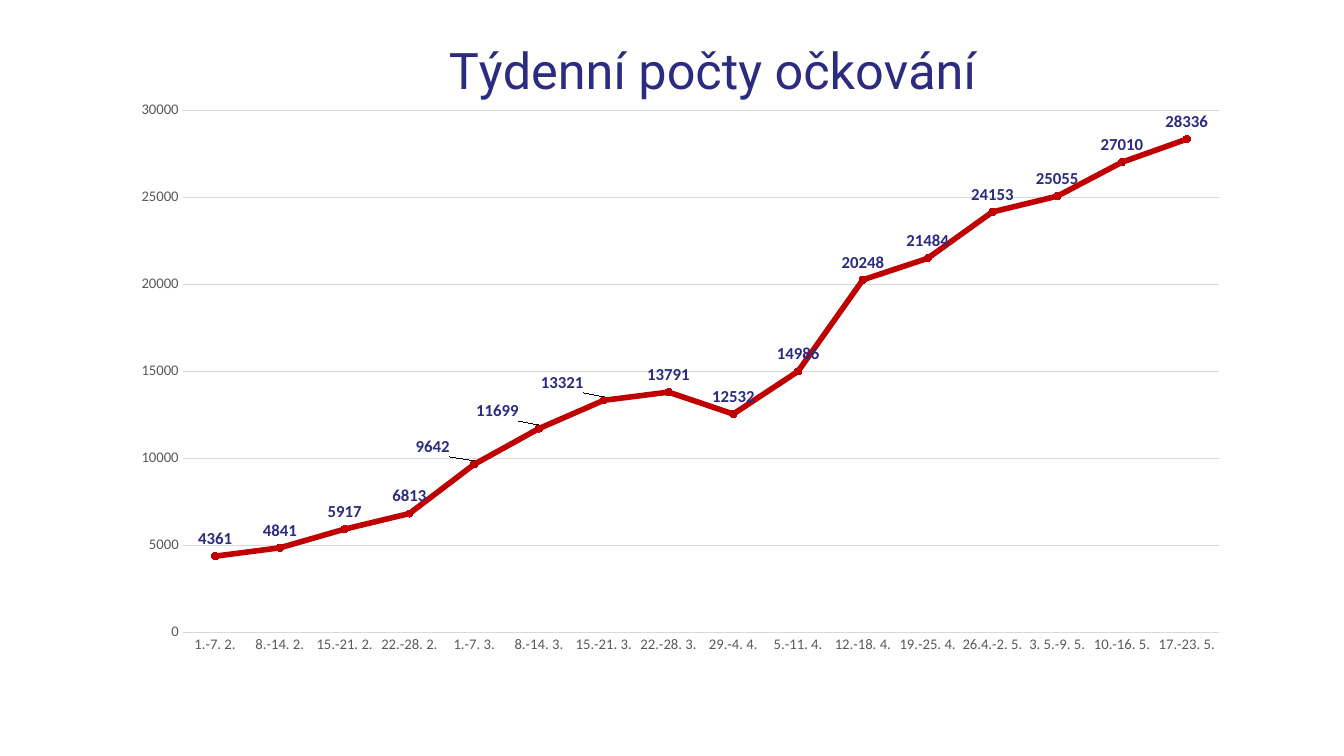
from pptx import Presentation
from pptx import util as u
from pptx.chart.data import CategoryChartData
from pptx.dml.color import RGBColor
from pptx.enum import chart as charts
from pptx.oxml import parse_xml
from pptx.oxml.ns import nsdecls, qn

NAVY = RGBColor(0x2B, 0x2B, 0x82)
RED = RGBColor(0xC0, 0x00, 0x00)
GREY = RGBColor(0x59, 0x59, 0x59)
LIGHT_GREY = RGBColor(0xD9, 0xD9, 0xD9)
WHITE = RGBColor(0xFF, 0xFF, 0xFF)

WEEKLY_COUNTS = {
    "1.-7. 2.": 4361, "8.-14. 2.": 4841, "15.-21. 2.": 5917, "22.-28. 2.": 6813,
    "1.-7. 3.": 9642, "8.-14. 3.": 11699, "15.-21. 3.": 13321, "22.-28. 3.": 13791,
    "29.-4. 4.": 12532, "5.-11. 4.": 14986, "12.-18. 4.": 20248, "19.-25. 4.": 21484,
    "26.4.-2. 5.": 24153, "3. 5.-9. 5.": 25055, "10.-16. 5.": 27010, "17.-23. 5.": 28336,
}
SHIFTED_LABELS = (4, 5, 6)


def style_font(font, name="Calibri", size=10.5, color=GREY, bold=False):
    font.name, font.size, font.bold = name, u.Pt(size), bold
    font.color.rgb = color


def write_text(text_frame, text, **style):
    run = text_frame.paragraphs[0].add_run()
    run.text = text
    style_font(run.font, **style)


def set_layout(element, index, target=None, **fractions):
    """Place a chart part by fractions of the chart size."""
    for old_layout in element.findall(qn("c:layout")):
        element.remove(old_layout)
    inner = f'<c:layoutTarget val="{target}"/>' if target else ""
    if target or "y" in fractions:
        inner += '<c:xMode val="edge"/><c:yMode val="edge"/>'
    inner += "".join(f'<c:{key} val="{value}"/>' for key, value in fractions.items())
    element.insert(index, parse_xml(
        f'<c:layout {nsdecls("c")}><c:manualLayout>{inner}</c:manualLayout></c:layout>'))


class ChartSlide:
    def __init__(self, presentation):
        self.slide = presentation.slides.add_slide(presentation.slide_layouts[6])
        self.slide.background.fill.solid()
        self.slide.background.fill.fore_color.rgb = WHITE
        self.label_style = dict(size=12, color=NAVY, bold=True)

    def add_line_chart(self, counts, left, top, width, height):
        data = CategoryChartData()
        data.categories = list(counts)
        data.add_series("Series 1", list(counts.values()))
        frame = self.slide.shapes.add_chart(
            charts.XL_CHART_TYPE.LINE_MARKERS,
            u.Cm(left), u.Cm(top), u.Cm(width), u.Cm(height), data)
        chart = frame.chart
        style_font(chart.font, size=10)
        chart.has_legend = False
        chart.plots[0].vary_by_categories = False
        set_layout(chart._chartSpace.chart.plotArea, 0, target="inner",
                   x=0.056, y=0.165, w=0.923, h=0.781)
        return chart

    def add_title(self, chart, text):
        chart.has_title = True
        title = chart.chart_title
        write_text(title.text_frame, text, name="Roboto", size=36, color=NAVY)
        set_layout(title._element, 1, x=0.285, y=0.04)

    def style_axes(self, chart):
        for axis in (chart.category_axis, chart.value_axis):
            axis.major_tick_mark = axis.minor_tick_mark = charts.XL_TICK_MARK.NONE
            style_font(axis.tick_labels.font)
        value_axis = chart.value_axis
        value_axis.minimum_scale, value_axis.maximum_scale = 0, 30000
        value_axis.major_unit = 5000
        value_axis.has_major_gridlines = True
        value_axis.format.line.fill.background()
        for line in (chart.category_axis.format.line, value_axis.major_gridlines.format.line):
            line.color.rgb = LIGHT_GREY
            line.width = u.Pt(0.75)

    def style_series(self, series):
        series.smooth = False
        series.format.line.color.rgb = RED
        series.format.line.width = u.Pt(4)
        marker = series.marker
        marker.style, marker.size = charts.XL_MARKER_STYLE.CIRCLE, 5
        marker.format.fill.solid()
        marker.format.fill.fore_color.rgb = RED
        marker.format.line.color.rgb = RED

    def add_labels(self, series, shifted):
        series.data_labels.show_value = True
        points = [series.points[index].data_label for index in shifted]
        for labels in (series.data_labels, *points):
            style_font(labels.font, **self.label_style)
            labels.position = charts.XL_LABEL_POSITION.ABOVE
        # Move the labels of the steep part to the left
        for label in points:
            set_layout(label._get_or_add_dLbl(), 1, x=-0.037)


def main():
    presentation = Presentation()
    presentation.slide_width, presentation.slide_height = u.Cm(33.87), u.Cm(19.05)
    page = ChartSlide(presentation)

    # Chart frame, title and axes
    chart = page.add_line_chart(WEEKLY_COUNTS, 3.02, 0, 28.3, 16.84)
    page.add_title(chart, "Týdenní počty očkování")
    page.style_axes(chart)

    # Weekly vaccination line
    series = chart.plots[0].series[0]
    page.style_series(series)
    page.add_labels(series, SHIFTED_LABELS)

    presentation.save("out.pptx")


if __name__ == "__main__":
    main()
